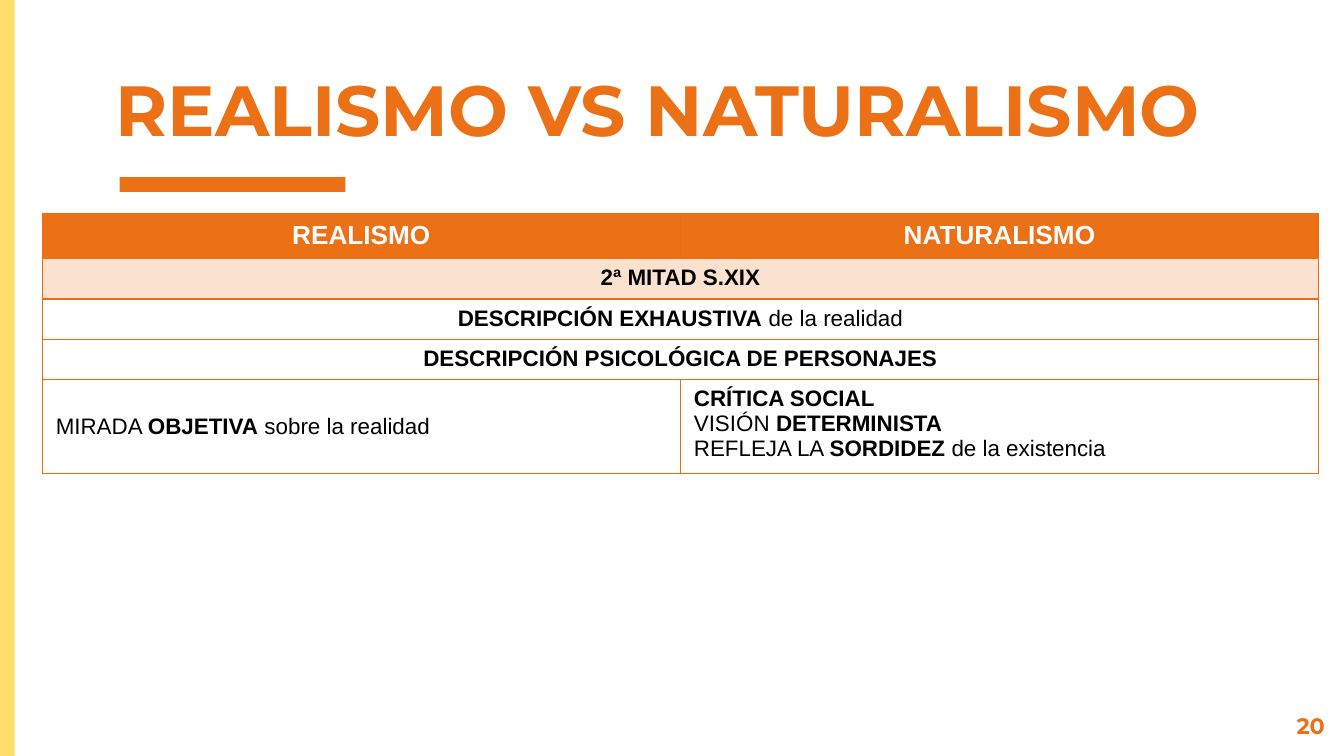
from lxml import etree
from pptx import Presentation
from pptx.dml.color import RGBColor
from pptx.enum.shapes import MSO_SHAPE
from pptx.enum.text import MSO_ANCHOR, PP_ALIGN
from pptx.oxml import parse_xml
from pptx.util import Cm, Pt

RECTANGLE = MSO_SHAPE.RECTANGLE
LEFT, CENTER, RIGHT = PP_ALIGN.LEFT, PP_ALIGN.CENTER, PP_ALIGN.RIGHT
TOP, MIDDLE, BOTTOM = MSO_ANCHOR.TOP, MSO_ANCHOR.MIDDLE, MSO_ANCHOR.BOTTOM
DRAWING_NS = "http://schemas.openxmlformats.org/drawingml/2006/main"
ORANGE, BORDER, YELLOW, PEACH = "EC7016", "EC6D10", "FFDF6A", "FBE2D0"
WHITE, BLACK = "FFFFFF", "000000"


def color(value):
    return RGBColor.from_string(value)


def write(frame, text, size=12, font="Arial", ink=BLACK, align=LEFT):
    """Write one paragraph per line; words between asterisks are bold."""
    frame.word_wrap = True
    for i, line in enumerate(text.split("\n")):
        paragraph = frame.paragraphs[0] if i == 0 else frame.add_paragraph()
        paragraph.alignment = align
        for j, part in enumerate(line.split("*")):
            if part:
                run = paragraph.add_run()
                run.text = part
                run.font.name, run.font.size = font, Pt(size)
                run.font.bold = j % 2 == 1
                run.font.color.rgb = color(ink)


deck = Presentation()
deck.slide_width, deck.slide_height = Cm(25.4), Cm(14.29)
slide = deck.slides.add_slide(deck.slide_layouts[6])

# Side band and title underline
for x, y, width, height, fill in [
    (0, 0, 0.28, 14.29, YELLOW),
    (2.26, 3.35, 4.27, 0.28, ORANGE),
]:
    bar = slide.shapes.add_shape(RECTANGLE, Cm(x), Cm(y), Cm(width), Cm(height))
    bar.shadow.inherit = False
    bar.fill.solid()
    bar.fill.fore_color.rgb = color(fill)
    bar.line.fill.background()

# Title and page number
for text, x, y, width, height, size, align, anchor in [
    ("*REALISMO VS NATURALISMO*", 1.93, 0.58, 22.78, 2.51, 38, LEFT, BOTTOM),
    ("*20*", 23.77, 13.21, 1.52, 0.86, 12, RIGHT, TOP),
]:
    box = slide.shapes.add_textbox(Cm(x), Cm(y), Cm(width), Cm(height))
    frame = box.text_frame
    frame.margin_left = frame.margin_right = Cm(0.25)
    frame.margin_top = frame.margin_bottom = Cm(0.25)
    frame.vertical_anchor = anchor
    write(frame, text, size, "Montserrat", ORANGE, align)

# Comparison: a row with one text spans both columns
comparison = [
    (0.83, ["*REALISMO*", "*NATURALISMO*"]),
    (0.72, ["*2ª MITAD S.XIX*"]),
    (0.73, ["*DESCRIPCIÓN EXHAUSTIVA* de la realidad"]),
    (0.73, ["*DESCRIPCIÓN PSICOLÓGICA DE PERSONAJES*"]),
    (1.69, ["MIRADA *OBJETIVA* sobre la realidad",
            "*CRÍTICA SOCIAL*\nVISIÓN *DETERMINISTA*\n"
            "REFLEJA LA *SORDIDEZ* de la existencia"]),
]
row_fills = {0: ORANGE, 1: PEACH}
table = slide.shapes.add_table(
    len(comparison), 2, Cm(0.8), Cm(4.04), Cm(24.12),
    Cm(sum(height for height, _ in comparison))).table
table.horz_banding = False
for column in table.columns:
    column.width = Cm(12.06)

for r, (height, texts) in enumerate(comparison):
    table.rows[r].height = Cm(height)
    if len(texts) == 1:
        table.cell(r, 0).merge(table.cell(r, 1))
    for c, text in enumerate(texts):
        cell = table.cell(r, c)
        cell.vertical_anchor = MIDDLE if (r, c) == (4, 0) else TOP
        write(cell.text_frame, text, size=14 if r == 0 else 12,
              ink=WHITE if r == 0 else BLACK, align=LEFT if r == 4 else CENTER)

    # Fill and borders, also on the cells hidden by a merge
    for c in range(2):
        cell = table.cell(r, c)
        if r in row_fills:
            cell.fill.solid()
            cell.fill.fore_color.rgb = color(row_fills[r])
        else:
            cell.fill.background()
        properties = cell._tc.get_or_add_tcPr()
        for i, side in enumerate(["lnL", "lnR", "lnT", "lnB"]):
            line = etree.Element(f"{{{DRAWING_NS}}}{side}", w=str(Pt(0.75)))
            solid = etree.SubElement(line, f"{{{DRAWING_NS}}}solidFill")
            etree.SubElement(solid, f"{{{DRAWING_NS}}}srgbClr", val=BORDER)
            properties.insert(i, parse_xml(etree.tostring(line)))

deck.save("out.pptx")
